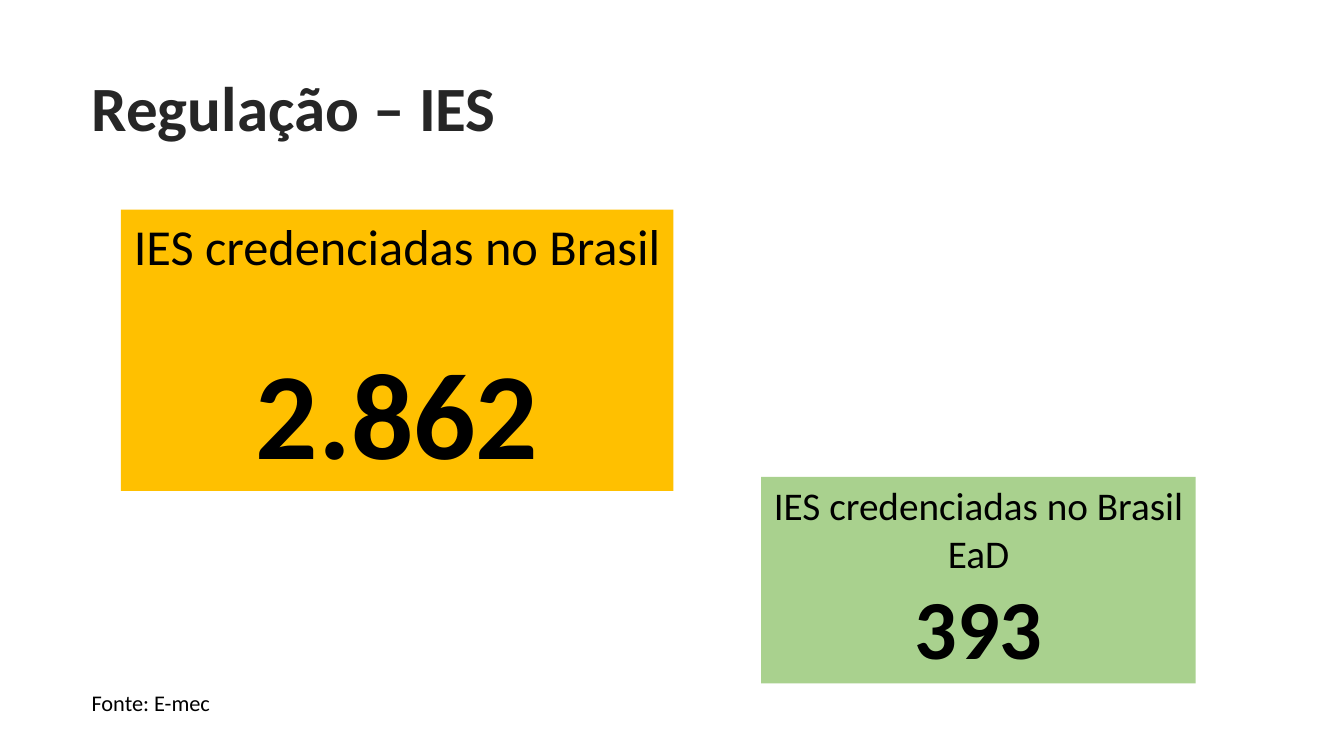
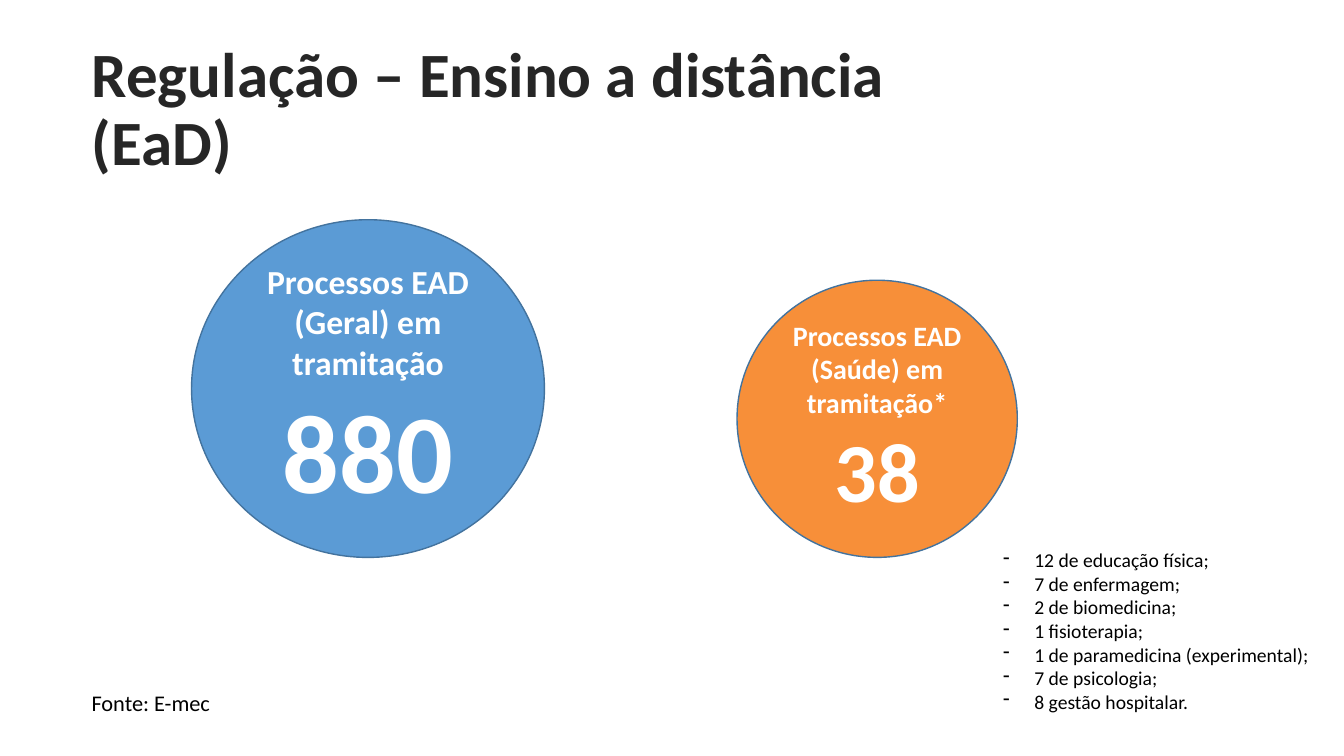
import pptx
import pptx.util
import pptx.dml.color
import pptx.enum.shapes
import pptx.enum.text
import pptx.oxml.ns
import lxml.etree

Inches, Pt = pptx.util.Inches, pptx.util.Pt
SHAPE = pptx.enum.shapes.MSO_SHAPE
ALIGN = pptx.enum.text.PP_ALIGN
ANCHOR = pptx.enum.text.MSO_ANCHOR

FONT = "Calibri"
COLORS = {
    "title": "262626",
    "text": "000000",
    "white": "FFFFFF",
    "yellow": "FFC000",
    "green": "A9D18E",
    "blue": "5B9BD5",
    "orange": "F78F39",
    "outline": "43739E",
}
HEALTH_COURSES = [
    "12 de educação física;",
    "7 de enfermagem;",
    "2 de biomedicina;",
    "1 fisioterapia;",
    "1 de paramedicina (experimental);",
    "7 de psicologia;",
    "8 gestão hospitalar.",
]


def rgb(name):
    return pptx.dml.color.RGBColor.from_string(COLORS[name])


def write(p, text, size, color="text", bold=False, align=ALIGN.LEFT):
    p.alignment = align
    r = p.add_run()
    r.text = text
    r.font.name = FONT
    r.font.size = Pt(size)
    r.font.bold = bold
    r.font.color.rgb = rgb(color)


def next_paragraph(tf, index):
    return tf.add_paragraph() if index else tf.paragraphs[0]


def add_text_box(s, box, wrap=True):
    tf = s.shapes.add_textbox(*map(Inches, box)).text_frame
    tf.word_wrap = wrap
    return tf


def add_base_slide(prs, title):
    """Add a slide with the shared title style and source note."""
    s = prs.slides.add_slide(prs.slide_layouts[5])
    sp = s.shapes.title
    sp.left, sp.top, sp.width, sp.height = map(Inches, (0.81, 0.51, 9.21, 1.19))
    tf = sp.text_frame
    tf.word_wrap = True
    tf.auto_size = pptx.enum.text.MSO_AUTO_SIZE.NONE
    tf.vertical_anchor = ANCHOR.MIDDLE
    p = tf.paragraphs[0]
    p.line_spacing = 0.9
    write(p, title, 45, "title", True)
    source = add_text_box(s, (0.81, 6.79, 1.4, 0.37), wrap=False)
    write(source.paragraphs[0], "Fonte: E-mec", 16)
    return s


def add_figure(s, kind, box, fill, labels, label_size, number, number_size,
               color="text", bold_label=False, gap=0):
    """Add a filled shape with label lines above a large bold number."""
    sp = s.shapes.add_shape(kind, *map(Inches, box))
    sp.shadow.inherit = False
    sp.fill.solid()
    sp.fill.fore_color.rgb = rgb(fill)
    tf = sp.text_frame
    for i, label in enumerate(labels):
        write(next_paragraph(tf, i), label, label_size, color, bold_label, ALIGN.CENTER)
    p = tf.add_paragraph()
    p.space_before = Pt(gap)
    write(p, number, number_size, color, True, ALIGN.CENTER)
    return sp


def add_card(s, box, fill, labels, label_size, number, number_size, gap=0):
    sp = add_figure(s, SHAPE.RECTANGLE, box, fill, labels, label_size,
                    number, number_size, gap=gap)
    sp.line.fill.background()
    sp.text_frame.word_wrap = False
    sp.text_frame.vertical_anchor = ANCHOR.TOP


def add_circle(s, box, fill, label, label_size, number, number_size):
    sp = add_figure(s, SHAPE.OVAL, box, fill, [label], label_size,
                    number, number_size, "white", True)
    sp.line.color.rgb = rgb("outline")
    sp.line.width = Pt(1)
    sp.text_frame.word_wrap = True
    sp.text_frame.vertical_anchor = ANCHOR.MIDDLE


def add_dash_list(s, box, items):
    tf = add_text_box(s, box)
    for i, item in enumerate(items):
        p = next_paragraph(tf, i)
        pPr = p._p.get_or_add_pPr()
        pPr.set("marL", str(Inches(0.31)))
        pPr.set("indent", str(-Inches(0.31)))
        bullet = lxml.etree.SubElement(pPr, pptx.oxml.ns.qn("a:buChar"))
        bullet.set("char", "-")
        write(p, item, 14, align=ALIGN.JUSTIFY)


def build_institutions(prs):
    s = add_base_slide(prs, "Regulação – IES")
    add_card(s, (1.2, 2.08, 5.48, 2.79), "yellow",
             ["IES credenciadas no Brasil"], 36, "2.862", 88, gap=44)
    add_card(s, (7.55, 4.73, 4.31, 2.05), "green",
             ["IES credenciadas no Brasil", "EaD"], 28, "393", 60)


def build_distance_learning(prs):
    s = add_base_slide(prs, "Regulação – Ensino a distância (EaD)")
    add_circle(s, (1.9, 2.18, 3.5, 3.35), "blue",
               "Processos EAD (Geral) em tramitação", 24, "880", 80)
    add_circle(s, (7.31, 2.78, 2.78, 2.75), "orange",
               "Processos EAD (Saúde) em tramitação*", 20, "38", 60)
    add_dash_list(s, (9.85, 5.39, 3.48, 1.75), HEALTH_COURSES)


def main():
    prs = pptx.Presentation()
    prs.slide_width, prs.slide_height = Inches(13.33), Inches(7.5)
    build_institutions(prs)
    build_distance_learning(prs)
    prs.save("out.pptx")


if __name__ == "__main__":
    main()
